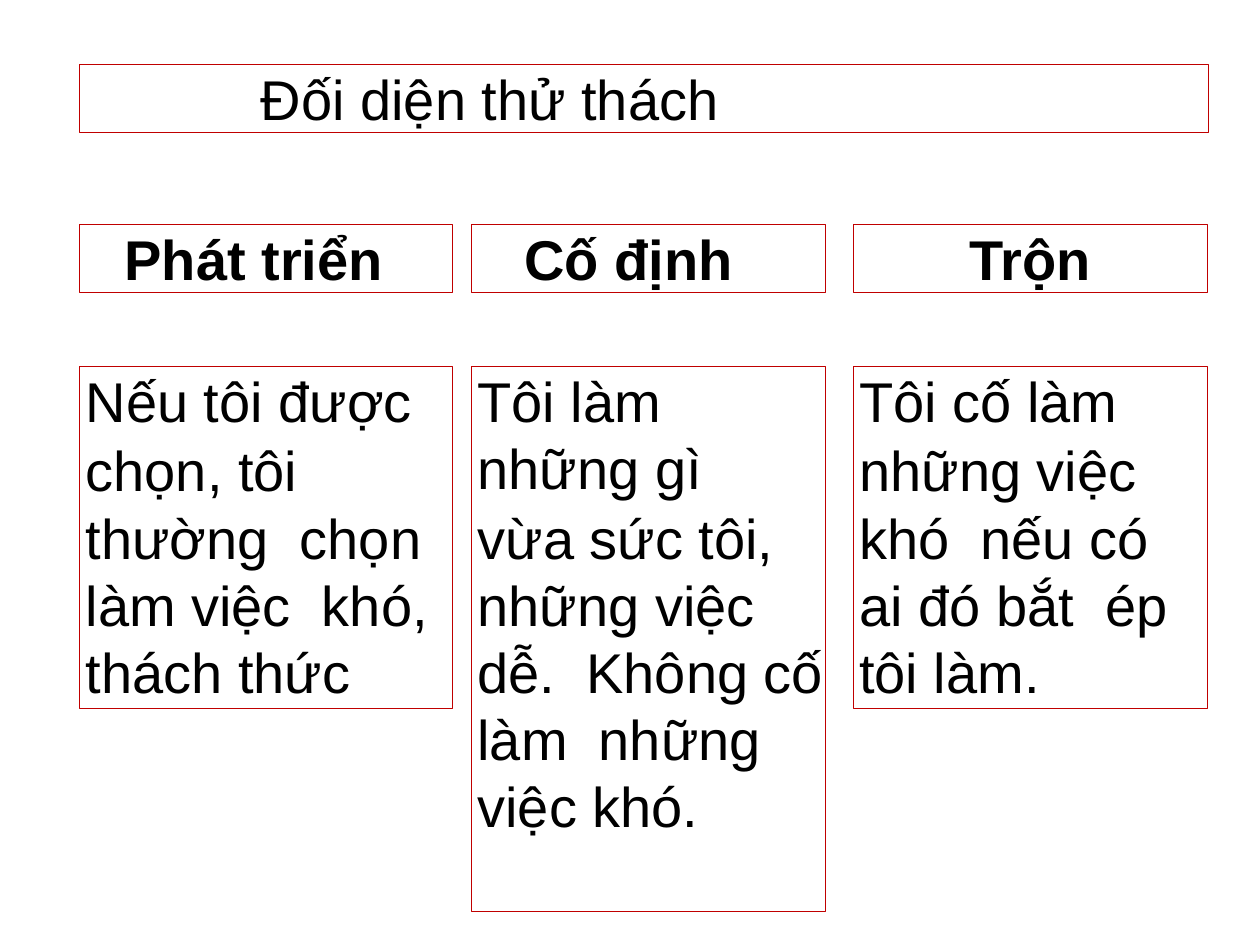
"""Build the slide comparing three mindsets when facing a challenge."""
from dataclasses import dataclass

import pptx
import pptx.dml.color
import pptx.enum.shapes
import pptx.enum.text
import pptx.util

Inches = pptx.util.Inches
Pt = pptx.util.Pt

COLOURS = {"border": "C00000", "text": "000000"}
FONT = "Arial"
TITLE_HEIGHT = 0.54
HEADING_TOP = 1.78
BODY_TOP = 2.91
BODY_INDENT = 0.05


@dataclass
class Column:
    left: float
    width: float
    heading: str
    heading_indent: float
    centred: bool
    body: list[str]
    body_height: float


COLUMNS = [
    Column(0.63, 2.96, "Phát triển", 0.36, False,
           ["Nếu tôi được", "chọn, tôi thường  chọn làm việc  khó, thách thức"], 2.71),
    Column(3.74, 2.81, "Cố định", 0.42, False,
           ["Tôi làm những gì",
            "vừa sức tôi,  những việc dễ.  Không cố làm  những việc khó."], 4.32),
    Column(6.77, 2.81, "Trộn", 0, True,
           ["Tôi cố làm", "những việc khó  nếu có ai đó bắt  ép tôi làm."], 2.71),
]


def colour(name: str) -> pptx.dml.color.RGBColor:
    """Return a named colour."""
    return pptx.dml.color.RGBColor.from_string(COLOURS[name])


def add_box(page, left: float, top: float, width: float, height: float,
            lines: list[str], indent: float, bold: bool = False,
            centred: bool = False) -> None:
    """Draw an outlined box holding one paragraph per line."""
    box = page.shapes.add_shape(
        pptx.enum.shapes.MSO_SHAPE.RECTANGLE,
        Inches(left), Inches(top), Inches(width), Inches(height))
    box.shadow.inherit = False
    box.fill.background()
    box.line.color.rgb = colour("border")
    box.line.width = Pt(0.36)
    frame = box.text_frame
    frame.word_wrap = True
    frame.auto_size = pptx.enum.text.MSO_AUTO_SIZE.SHAPE_TO_FIT_TEXT
    frame.vertical_anchor = pptx.enum.text.MSO_ANCHOR.TOP
    frame.margin_left = frame.margin_right = Inches(0)
    frame.margin_top = frame.margin_bottom = Inches(0)
    align = pptx.enum.text.PP_ALIGN
    for index, line in enumerate(lines):
        para = frame.add_paragraph() if index else frame.paragraphs[0]
        para.alignment = align.CENTER if centred else align.LEFT
        para.space_before = Pt(1.1 if index else 0)
        properties = para._p.get_or_add_pPr()
        properties.set("marL", str(Inches(indent)))
        properties.set("indent", "0")
        span = para.add_run()
        span.text = line
        span.font.name = FONT
        span.font.size = Pt(32)
        span.font.bold = bold
        span.font.color.rgb = colour("text")


def add_column(page, column: Column) -> None:
    """Draw a bold heading box and the description under it."""
    add_box(page, column.left, HEADING_TOP, column.width, TITLE_HEIGHT,
            [column.heading], column.heading_indent, True, column.centred)
    add_box(page, column.left, BODY_TOP, column.width, column.body_height,
            column.body, BODY_INDENT)


def main() -> None:
    """Build and save the deck."""
    deck = pptx.Presentation()
    deck.slide_width = Inches(10)
    deck.slide_height = Inches(7.5)
    page = deck.slides.add_slide(deck.slide_layouts[6])
    add_box(page, 0.63, 0.51, 8.96, TITLE_HEIGHT, ["Đối diện thử thách"], 1.44)
    for column in COLUMNS:
        add_column(page, column)
    deck.save("out.pptx")


if __name__ == "__main__":
    main()
